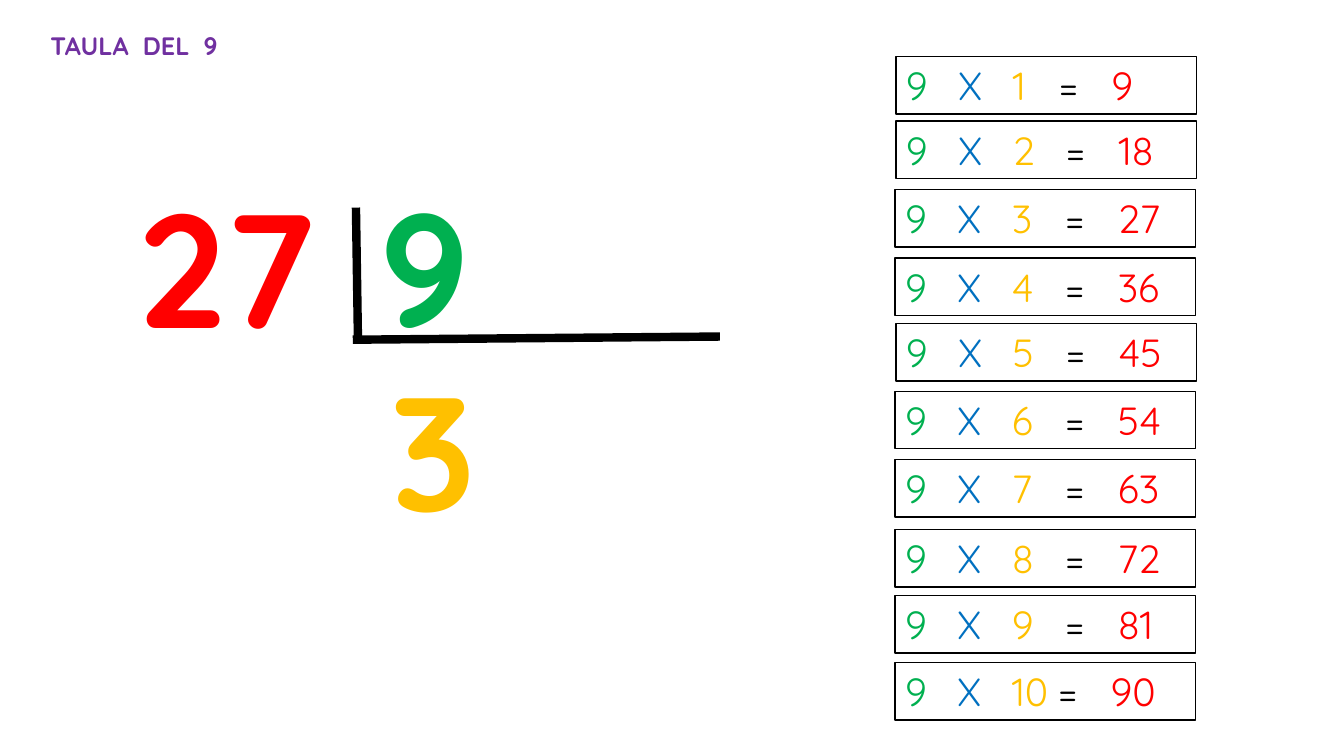
from lxml import etree
from pptx import Presentation
from pptx.dml.color import RGBColor
from pptx.enum.shapes import MSO_CONNECTOR, MSO_SHAPE
from pptx.enum.text import MSO_ANCHOR, MSO_AUTO_SIZE, PP_ALIGN
from pptx.oxml.ns import qn
from pptx.util import Cm, Pt

RECT, STRAIGHT = MSO_SHAPE.RECTANGLE, MSO_CONNECTOR.STRAIGHT
LEFT, CENTER = PP_ALIGN.LEFT, PP_ALIGN.CENTER
TOP, GROW = MSO_ANCHOR.TOP, MSO_AUTO_SIZE.SHAPE_TO_FIT_TEXT
GREEN, BLUE, YELLOW, RED = "00B050", "0070C0", "FFC000", "FF0000"
BLACK, WHITE, PURPLE = "000000", "FFFFFF", "7030A0"


def rgb(color):
    return RGBColor.from_string(color)


def write(sp, runs, size, bold, align):
    tf = sp.text_frame
    for name, value in dict(word_wrap=True, auto_size=GROW, vertical_anchor=TOP).items():
        setattr(tf, name, value)
    p = tf.paragraphs[0]
    p.alignment = align
    for text, color in runs:
        r = p.add_run()
        r.text = text
        for name, value in dict(name="Quicksand", size=Pt(size), bold=bold).items():
            setattr(r.font, name, value)
        r.font.color.rgb = rgb(color)
    return p


prs = Presentation()
prs.slide_width, prs.slide_height = Cm(33.87), Cm(19.05)
s = prs.slides.add_slide(prs.slide_layouts[6])

# Title and the numbers of the division
for text, color, size, align, box in [
    ("TAULA  DEL  9", PURPLE, 18, LEFT, (1.02, 0.64, 6.68, 1.02)),
    ("27", RED, 115, CENTER, (3.02, 4.09, 5.44, 5.18)),
    ("9", GREEN, 115, CENTER, (9.19, 4.09, 3, 5.18)),
    ("3", YELLOW, 115, CENTER, (9.42, 8.71, 3, 5.18)),
]:
    sp = s.shapes.add_textbox(*map(Cm, box))
    write(sp, [(text, color)], size, True, align)

# Division bracket
bracket = s.shapes.add_group_shape()
for ends in [(8.97, 5.23, 9.02, 8.51), (8.89, 8.56, 18.14, 8.48)]:
    line = bracket.shapes.add_connector(STRAIGHT, *map(Cm, ends))
    line.line.color.rgb = rgb(BLACK)
    line.line.width = Pt(6)
    etree.SubElement(line._element.spPr, qn("a:effectLst"))

# Multiplication table, one box per row, columns set by tab stops
tops = [1.42, 3.05, 4.78, 6.5, 8.15, 9.86, 11.58, 13.34, 15.01, 16.69]
for n, top in enumerate(tops, 1):
    left = 22.58 if n in (1, 2, 5) else 22.56
    sp = s.shapes.add_shape(RECT, Cm(left), Cm(top), Cm(7.57), Cm(1.45))
    sp.shadow.inherit = False
    sp.fill.solid()
    sp.fill.fore_color.rgb = rgb(WHITE)
    sp.line.color.rgb = rgb(BLACK)
    sp.line.width = Pt(1)
    runs = [("9\t", GREEN), ("X\t", BLUE), (f"{n}\t", YELLOW), ("=\t", BLACK), (f"{9 * n}", RED)]
    p = write(sp, runs, 28, False, LEFT)
    shift = 0.18 if n in (1, 10) else 0
    tabs = etree.SubElement(p._p.get_or_add_pPr(), qn("a:tabLst"))
    for stop in (1.32, 2.69, 4.04 - shift, 5.36 - shift):
        etree.SubElement(tabs, qn("a:tab"), pos=str(int(Cm(stop))), algn="l")

prs.save("out.pptx")
